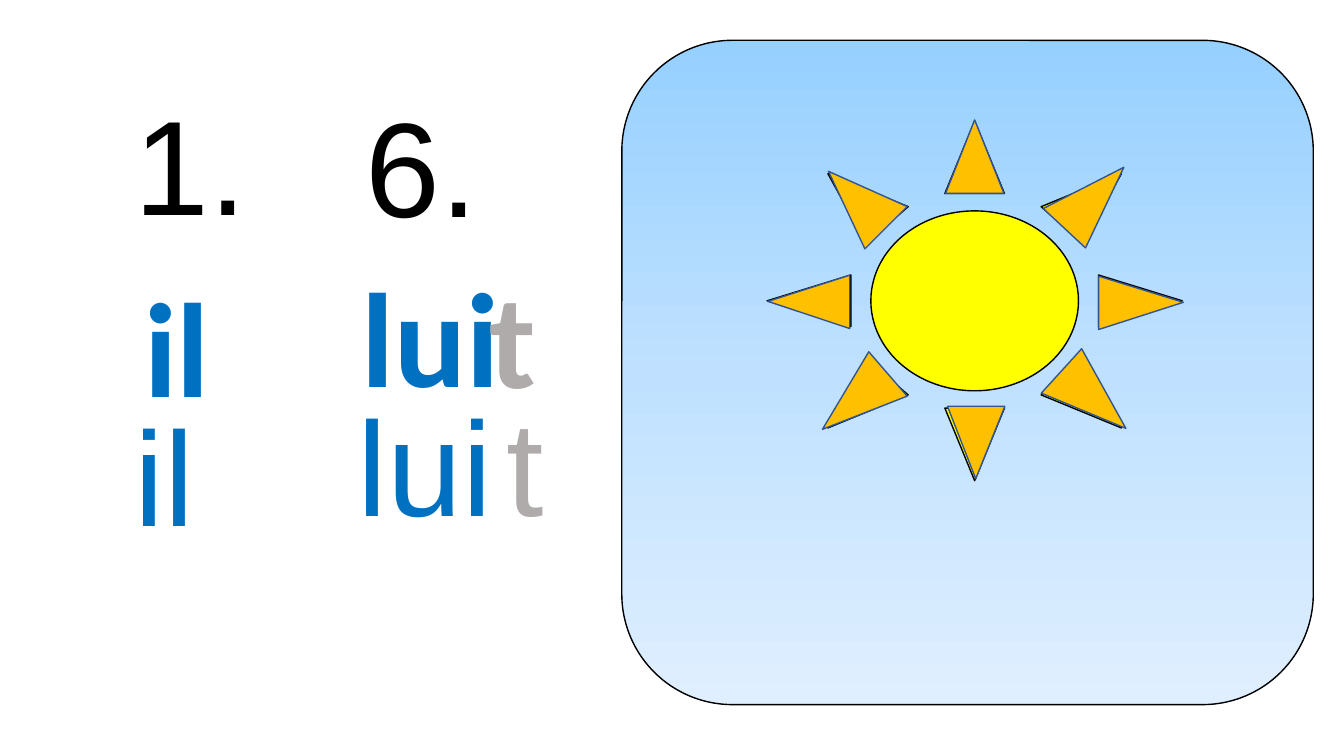
from copy import deepcopy

from pptx import Presentation
from pptx.dml.color import RGBColor
from pptx.enum.shapes import MSO_SHAPE
from pptx.enum.text import MSO_ANCHOR
from pptx.oxml.ns import qn
from pptx.util import Pt

BLACK, BLUE, GREY = "000000", "0070C0", "AFABAB"
YELLOW, ORANGE, RAY_EDGE = "FFFF00", "FFC000", "325491"
SKY = ("96D0FF", "BFE1FF", "E0EFFF")

# Each ray: its tip, then the two corners of its base
RAYS = [
    [(696.2, 85.7), (675.4, 138.2), (717.1, 138.2)],
    [(802.8, 119.5), (745.2, 149), (775.4, 177.1)],
    [(591.8, 122.4), (617.8, 177.8), (648, 147.6)],
    [(697, 342), (717.8, 290.2), (676.8, 290.2)],
    [(548.6, 215.3), (607, 234.7), (607, 196.6)],
    [(845.3, 216), (784.8, 235.4), (784.8, 197.3)],
    [(587.5, 306.7), (648, 283), (620.6, 251.3)],
    [(804.2, 306), (743.8, 280.8), (772.6, 249.1)],
]


def color(value):
    return RGBColor.from_string(value)


def add_text(page, text, left, top, width, height, font, fill, bold=False):
    box = page.shapes.add_textbox(Pt(left), Pt(top), Pt(width), Pt(height))
    frame = box.text_frame
    frame.word_wrap = True
    frame.text = text
    span = frame.paragraphs[0].runs[0]
    span.font.name = font
    span.font.size = Pt(96)
    span.font.bold = bold
    span.font.color.rgb = color(fill)
    return frame


def add_number(page, text, left, top):
    frame = add_text(page, text, left, top, 108.7, 113.8, "Arial", BLACK)
    frame.vertical_anchor = MSO_ANCHOR.MIDDLE
    frame.paragraphs[0].line_spacing = 0.9


def style(shape, edge, fill=None):
    shape.shadow.inherit = False
    if fill:
        shape.fill.solid()
        shape.fill.fore_color.rgb = color(fill)
    shape.line.color.rgb = color(edge)
    shape.line.width = Pt(1)


def add_sky(page):
    """Add the rounded panel with its three-stop vertical gradient."""
    sky = page.shapes.add_shape(MSO_SHAPE.ROUNDED_RECTANGLE,
                                Pt(444.2), Pt(28.8), Pt(493.9), Pt(474.5))
    style(sky, BLACK)
    sky.fill.gradient()
    sky.fill.gradient_angle = 270
    stops = sky.element.spPr.find(qn("a:gradFill")).find(qn("a:gsLst"))
    stops.insert(1, deepcopy(stops[0]))
    for index, (stop, value) in enumerate(zip(sky.fill.gradient_stops, SKY)):
        stop.position = index / 2
        stop.color.rgb = color(value)


def add_sun(page):
    sun = page.shapes.add_shape(MSO_SHAPE.SUN,
                                Pt(547.9), Pt(86.4), Pt(296.6), Pt(257))
    style(sun, BLACK, YELLOW)


def add_ray(page, corners):
    tip, *base = [(Pt(x), Pt(y)) for x, y in corners]
    builder = page.shapes.build_freeform(*tip)
    builder.add_line_segments(base, close=True)
    style(builder.convert_to_shape(), RAY_EDGE, ORANGE)


def main():
    deck = Presentation()
    deck.slide_width, deck.slide_height = Pt(960), Pt(540)
    page = deck.slides.add_slide(deck.slide_layouts[6])

    add_number(page, "1.", 89.3, 66.2)
    add_number(page, "6.", 254.2, 67.7)
    for text, left, top, fill in [("lui", 248.4, 269.3, BLUE),
                                  ("il", 89.3, 276.5, BLUE),
                                  ("t", 355, 269.3, GREY)]:
        add_text(page, text, left, top, 134.6, 123.8, "Arial", fill)
    for text, left, top, width, fill in [("lui", 251.3, 177.1, 134.6, BLUE),
                                         ("il", 95.8, 184.3, 84.2, BLUE),
                                         ("t", 342.7, 177.8, 84.2, GREY)]:
        add_text(page, text, left, top, width, 123.8, "Calibri", fill, bold=True)

    add_sky(page)
    add_sun(page)
    for corners in RAYS:
        add_ray(page, corners)

    deck.save("out.pptx")


if __name__ == "__main__":
    main()
